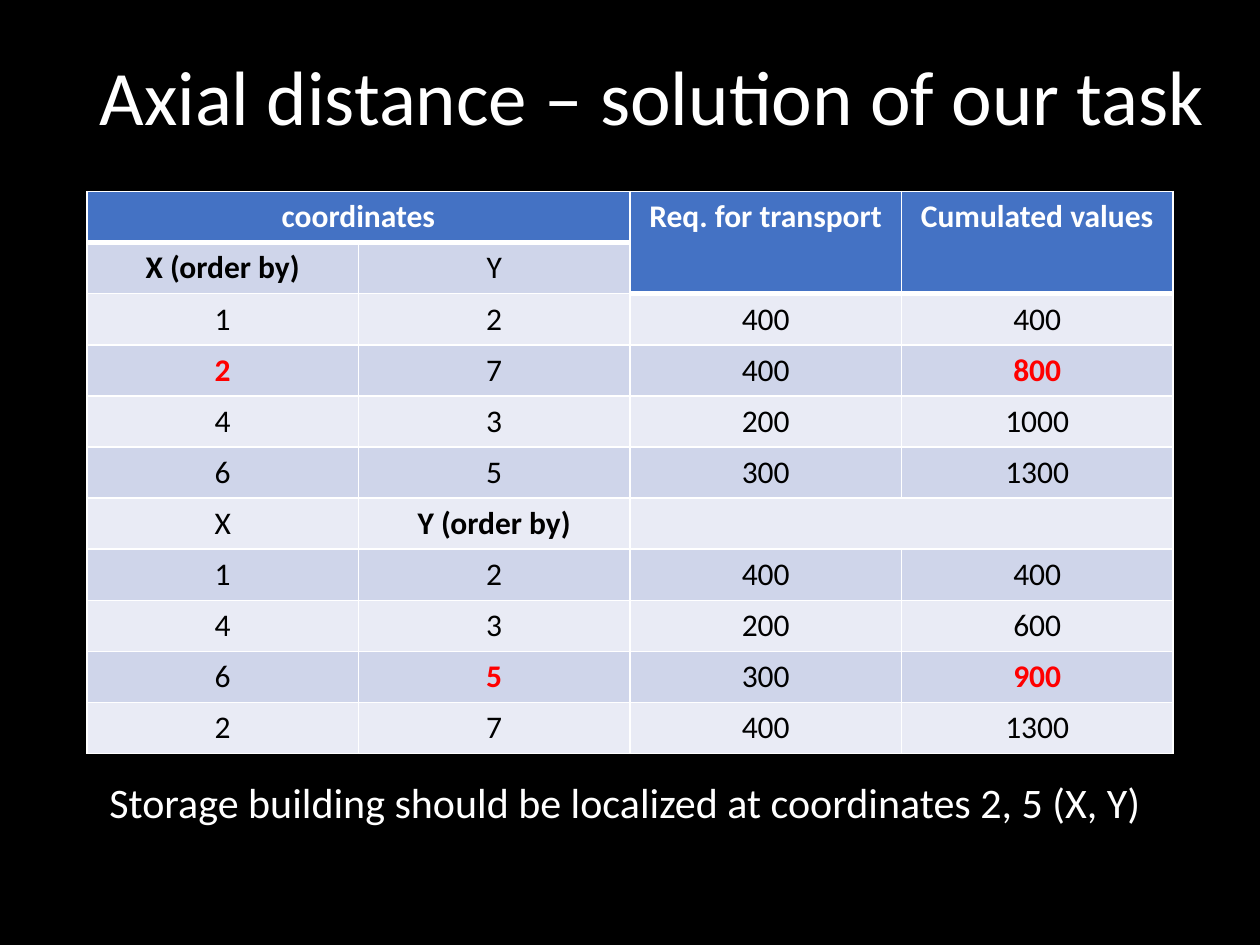
from dataclasses import dataclass

from lxml import etree
from pptx import Presentation
from pptx.dml.color import RGBColor
from pptx.enum.text import MSO_ANCHOR, MSO_AUTO_SIZE, PP_ALIGN
from pptx.oxml.ns import qn
from pptx.util import Inches, Pt

LEFT, MID = PP_ALIGN.LEFT, PP_ALIGN.CENTER
MIDDLE = MSO_ANCHOR.MIDDLE
NO_FIT, GROW = MSO_AUTO_SIZE.NONE, MSO_AUTO_SIZE.SHAPE_TO_FIT_TEXT

UNIT = Inches(0.1)  # the slide is a grid of 100 columns by 75 rows


@dataclass(frozen=True)
class Theme:
    font: str = "Calibri"
    back: str = "000000"
    light: str = "FFFFFF"
    dark: str = "000000"
    head: str = "4472C4"
    bands: tuple = ("E9EBF5", "CFD5EA")
    hit: str = "FF0000"
    title: int = 44
    note: int = 24
    cell: int = 18
    thin: int = 1
    thick: int = 3


@dataclass(frozen=True)
class Box:
    col: float
    row: float
    cols: float
    rows: float

    def place(self) -> tuple:
        return tuple(round(n * UNIT) for n in (self.col, self.row, self.cols, self.rows))


@dataclass(frozen=True)
class Cell:
    text: str
    bold: bool = False
    hit: bool = False


THEME = Theme()
TITLE = Box(6.9, 2.1, 90.4, 11.8)
GRID = Box(6.9, 15.2, 86.2, 44.6)
NOTE = Box(7.7, 61.1, 84.6, 5)

# Table content: two sorted blocks under one merged header
ROWS = [
    ["coordinates", "", "Req. for transport", "Cumulated values"],
    [Cell("X (order by)", bold=True), "Y", "", ""],
    ["1", "2", "400", "400"],
    [Cell("2", hit=True), "7", "400", Cell("800", hit=True)],
    ["4", "3", "200", "1000"],
    ["6", "5", "300", "1300"],
    ["X", Cell("Y (order by)", bold=True), "", ""],
    ["1", "2", "400", "400"],
    ["4", "3", "200", "600"],
    ["6", Cell("5", hit=True), "300", Cell("900", hit=True)],
    ["2", "7", "400", "1300"],
]
MERGES = [((0, 0), (0, 1)), ((0, 2), (1, 2)), ((0, 3), (1, 3)), ((6, 2), (6, 3))]
HEAD_ENDS = (0, 0, 1, 1)  # last header row in each column


def write(frame, text: str, *, size: int, color: str, bold: bool = False,
          align=LEFT, space: float = 1.0) -> None:
    par = frame.paragraphs[0]
    par.alignment, par.line_spacing = align, space
    run = par.add_run()
    run.text = text
    font = run.font
    font.name, font.size, font.bold = THEME.font, Pt(size), bold
    font.color.rgb = RGBColor.from_string(color)


def paint(fill, color: str) -> None:
    fill.solid()
    fill.fore_color.rgb = RGBColor.from_string(color)


def edge(cell, top: int, bottom: int) -> None:
    sides = {"L": THEME.thin, "R": THEME.thin, "T": top, "B": bottom}
    props = cell._tc.get_or_add_tcPr()
    for at, (side, width) in enumerate(sides.items()):
        line = etree.Element(qn(f"a:ln{side}"), w=str(Pt(width)))
        solid = etree.SubElement(line, qn("a:solidFill"))
        etree.SubElement(solid, qn("a:srgbClr"), val=THEME.light)
        props.insert(at, line)


def draw_title(slide, text: str) -> None:
    shape = slide.shapes.title
    shape.left, shape.top, shape.width, shape.height = TITLE.place()
    frame = shape.text_frame
    frame.auto_size, frame.vertical_anchor = NO_FIT, MIDDLE
    write(frame, text, size=THEME.title, color=THEME.light, space=0.9)


def draw_table(slide) -> None:
    left, top, width, height = GRID.place()
    table = slide.shapes.add_table(len(ROWS), len(ROWS[0]), left, top, width, height).table
    for col in table.columns:
        col.width = width // len(ROWS[0])
    for row in table.rows:
        row.height = height // len(ROWS)
    for start, end in MERGES:
        table.cell(*start).merge(table.cell(*end))

    for r, row in enumerate(ROWS):
        for c, item in enumerate(row):
            item = item if isinstance(item, Cell) else Cell(item)
            cell, last = table.cell(r, c), HEAD_ENDS[c]
            head = r <= last
            paint(cell.fill, THEME.head if head else THEME.bands[r % 2])
            edge(cell, THEME.thick if r == last + 1 else THEME.thin,
                 THEME.thick if r == last else THEME.thin)
            if item.text:
                color = THEME.light if head else THEME.hit if item.hit else THEME.dark
                write(cell.text_frame, item.text, size=THEME.cell, color=color,
                      bold=head or item.bold or item.hit, align=MID)


def draw_note(slide, text: str) -> None:
    frame = slide.shapes.add_textbox(*NOTE.place()).text_frame
    frame.word_wrap, frame.auto_size = False, GROW
    write(frame, text, size=THEME.note, color=THEME.light)


def main() -> None:
    deck = Presentation()
    deck.slide_width, deck.slide_height = 100 * UNIT, 75 * UNIT
    slide = deck.slides.add_slide(deck.slide_layouts.get_by_name("Title Only"))
    paint(slide.background.fill, THEME.back)
    draw_title(slide, "Axial distance – solution of our task")
    draw_table(slide)
    draw_note(slide, "Storage building should be localized at coordinates 2, 5 (X, Y)")
    deck.save("out.pptx")


if __name__ == "__main__":
    main()
